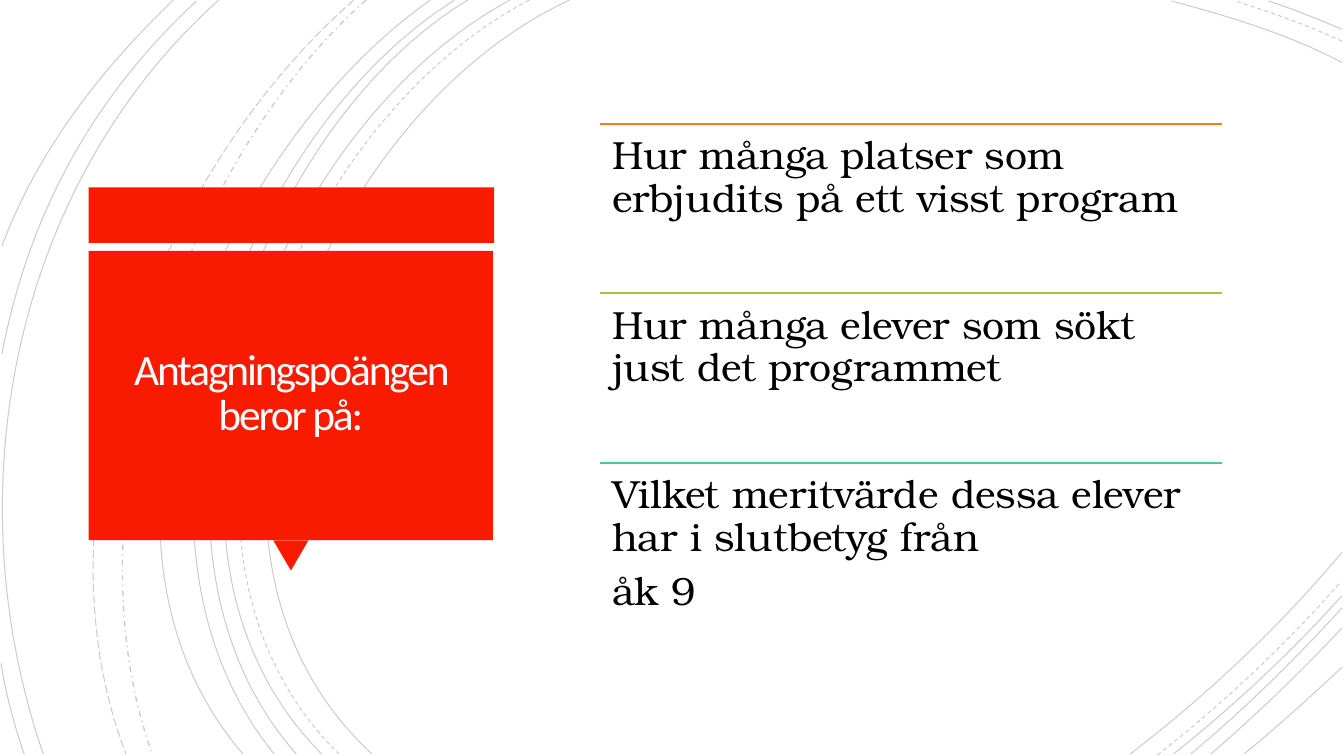
from dataclasses import dataclass

from lxml.etree import SubElement
from pptx import Presentation
from pptx.dml.color import RGBColor
from pptx.enum.dml import MSO_LINE
from pptx.enum.shapes import MSO_CONNECTOR, MSO_SHAPE
from pptx.enum.text import MSO_ANCHOR, MSO_AUTO_SIZE, PP_ALIGN
from pptx.oxml.ns import qn
from pptx.util import Pt


@dataclass(frozen=True)
class Theme:
    """Colours, fonts and sizes of the slide."""
    red: str = "F81B02"
    white: str = "FFFEFF"
    ink: str = "000000"
    rules: tuple = ("FC7715", "AFBF41", "50C49F")
    head: str = "Calibri"
    body: str = "TeX Gyre Bonum"
    big: float = 31
    mid: float = 28
    hair: float = 0.75
    rule: float = 1.25
    fade: int = 20
    cols: float = 13.33
    rows: float = 7.5


SOLID, DASH = MSO_LINE.SOLID, MSO_LINE.DASH
DOT, LONG = MSO_LINE.DASH_DOT, MSO_LINE.LONG_DASH

ARCS = [
    (SOLID, (5.65, 0), (3.15, 1.15), (1.43, 5.4), (3.69, 7.48)),
    (SOLID, (13.31, 0.62), (12.78, 0.34), (12.18, 0.16), (11.62, 0.01)),
    (SOLID, (11.21, 7.48), (11.97, 6.9), (12.69, 6.22), (13.31, 5.48)),
    (DASH, (5.25, 0), (2.85, 1.25), (1.23, 5.37), (3.36, 7.48)),
    (DASH, (13.31, 0.41), (12.97, 0.25), (12.6, 0.12), (12.25, 0.01)),
    (DASH, (11.48, 7.49), (12.13, 6.98), (12.75, 6.4), (13.3, 5.77)),
    (SOLID, (5.06, 0), (2.7, 1.27), (1.1, 5.37), (3.19, 7.48)),
    (SOLID, (13.31, 0.29), (13.07, 0.19), (12.83, 0.09), (12.58, 0.01)),
    (SOLID, (11.64, 7.48), (12.23, 7.01), (12.8, 6.48), (13.31, 5.91)),
    (SOLID, (4.64, 0), (2.44, 1.33), (1.1, 5.41), (2.94, 7.48)),
    (SOLID, (11.81, 7.48), (12.34, 7.04), (12.84, 6.55), (13.31, 6.03)),
    (SOLID, (4.51, 0), (2.31, 1.38), (0.97, 5.33), (2.72, 7.48)),
    (SOLID, (12.01, 7.48), (12.46, 7.09), (12.9, 6.67), (13.31, 6.23)),
    (SOLID, (4.27, 0), (2.17, 1.47), (0.53, 5.29), (2.41, 7.48)),
    (SOLID, (12.34, 7.48), (12.67, 7.21), (12.99, 6.92), (13.31, 6.62)),
    (DOT, (3.63, 0), (1.76, 1.66), (0.65, 5.09), (1.51, 7.48)),
    (LONG, (3.51, 0), (1.57, 1.69), (0.29, 4.99), (1.25, 7.48)),
    (SOLID, (2.17, 0), (0.11, 1.85), (-0.46, 4.9), (0.43, 7.48)),
    (SOLID, (1.95, 0.01), (0.92, 0.96), (0.28, 2.14), (0.02, 3.51)),
    (SOLID, (0.01, 6.58), (0.06, 6.89), (0.14, 7.19), (0.24, 7.48)),
    (SOLID, (1.72, 0), (1, 0.69), (0.37, 1.5), (0.02, 2.44)),
]

ITEMS = [
    "Hur många platser som erbjudits på ett visst program",
    "Hur många elever som sökt just det programmet",
    "Vilket meritvärde dessa elever har i slutbetyg från\nåk 9",
]


class Page:
    """Draws on one slide in columns and rows of a grid."""

    def __init__(self, deck, theme, layout):
        """Add a slide and keep the size of a grid cell."""
        self.look = theme
        self.slide = deck.slides.add_slide(deck.slide_layouts[layout])
        self.shapes = self.slide.shapes
        self.wide = deck.slide_width / theme.cols
        self.high = deck.slide_height / theme.rows

    def spot(self, col, row):
        """Turn a column and a row into a place on the slide."""
        return round(col * self.wide), round(row * self.high)

    def arc(self, dash, *ends):
        """Draw a faint cubic curve from its four points."""
        first, *rest = [self.spot(*point) for point in ends]
        pen = self.shapes.build_freeform(*first)
        pen.add_line_segments(rest, close=False)
        shape = pen.convert_to_shape()
        route = shape.element.spPr.find(".//" + qn("a:path"))
        legs = route.findall(qn("a:lnTo"))
        curve = SubElement(route, qn("a:cubicBezTo"))
        for leg in legs:
            curve.append(leg[0])
            route.remove(leg)
        shape.shadow.inherit = False
        shape.fill.background()
        line = shape.line
        line.color.rgb = RGBColor.from_string(self.look.ink)
        line.width = Pt(1 if dash == DOT else self.look.hair)
        line.dash_style = dash
        tint = shape.element.spPr.find(qn("a:ln")).find(".//" + qn("a:srgbClr"))
        SubElement(tint, qn("a:alpha")).set("val", str(self.look.fade * 1000))

    def block(self, kind, col, row, cols, rows, turn=0):
        """Draw a filled red shape."""
        shape = self.shapes.add_shape(kind, *self.spot(col, row), *self.spot(cols, rows))
        shape.rotation = turn
        shape.shadow.inherit = False
        shape.fill.solid()
        shape.fill.fore_color.rgb = RGBColor.from_string(self.look.red)
        shape.line.fill.background()

    def rule(self, col, row, cols, color):
        """Draw a level line."""
        line = self.shapes.add_connector(
            MSO_CONNECTOR.STRAIGHT, *self.spot(col, row), *self.spot(col + cols, row))
        line.line.color.rgb = RGBColor.from_string(color)
        line.line.width = Pt(self.look.rule)
        SubElement(line.element.spPr, qn("a:effectLst"))

    def fill(self, holder, text, box, font, size, color, pad, space,
             align=PP_ALIGN.LEFT, anchor=MSO_ANCHOR.TOP, after=0, track=0):
        """Place a placeholder on top and set its text."""
        holder.element.getparent().append(holder.element)
        holder.left, holder.top = self.spot(*box[:2])
        holder.width, holder.height = self.spot(*box[2:])
        frame = holder.text_frame
        frame.text = text
        frame.word_wrap = True
        frame.auto_size = MSO_AUTO_SIZE.NONE
        frame.vertical_anchor = anchor
        frame.margin_left = frame.margin_right = self.spot(pad, 0)[0]
        frame.margin_top = frame.margin_bottom = self.spot(0, pad)[1]
        for para in frame.paragraphs:
            para.alignment = align
            para.line_spacing = space
            para.space_before, para.space_after = Pt(0), Pt(after)
            props = para._p.get_or_add_pPr()
            props.set("marL", "0")
            props.set("indent", "0")
            SubElement(props, qn("a:buNone"))
            for run in para.runs:
                run.font.name, run.font.size = font, Pt(size)
                run.font.bold = False
                run.font.color.rgb = RGBColor.from_string(color)
                run.font._element.set("spc", str(round(track * 100)))

    def title(self, text, *box):
        """Set the slide title."""
        look = self.look
        self.fill(self.shapes.title, text, box, look.head, look.big, look.white,
                  0.25, 0.85, PP_ALIGN.CENTER, MSO_ANCHOR.MIDDLE, track=-1.5)

    def list(self, items, col, row, cols, rows):
        """Stack the items, each under its own coloured line."""
        look = self.look
        for i, (text, color) in enumerate(zip(items, look.rules)):
            top = row + i * rows
            self.rule(col, top, cols, color)
            self.fill(self.slide.placeholders[i + 1], text, (col, top, cols, rows),
                      look.body, look.mid, look.ink, 0.12, 0.9, after=9)

    def tidy(self):
        """Remove placeholders left empty."""
        for holder in [*self.slide.placeholders]:
            if not holder.text_frame.text:
                holder.element.getparent().remove(holder.element)


def main():
    """Build and save the slide."""
    theme = Theme()
    deck = Presentation()
    deck.slide_width, deck.slide_height = Pt(theme.cols * 72), Pt(theme.rows * 72)
    page = Page(deck, theme, 4)
    for arc in ARCS:
        page.arc(*arc)
    page.block(MSO_SHAPE.RECTANGLE, 0.88, 1.86, 4.02, 0.55)
    page.block(MSO_SHAPE.ISOSCELES_TRIANGLE, 2.71, 5.36, 0.35, 0.3, 180)
    page.block(MSO_SHAPE.RECTANGLE, 0.88, 2.49, 4.01, 2.87)
    page.title("Antagningspoängen beror på:", 0.97, 2.57, 3.83, 2.69)
    page.list(ITEMS, 5.95, 1.23, 6.17, 1.68)
    page.tidy()
    deck.save("out.pptx")


if __name__ == "__main__":
    main()
